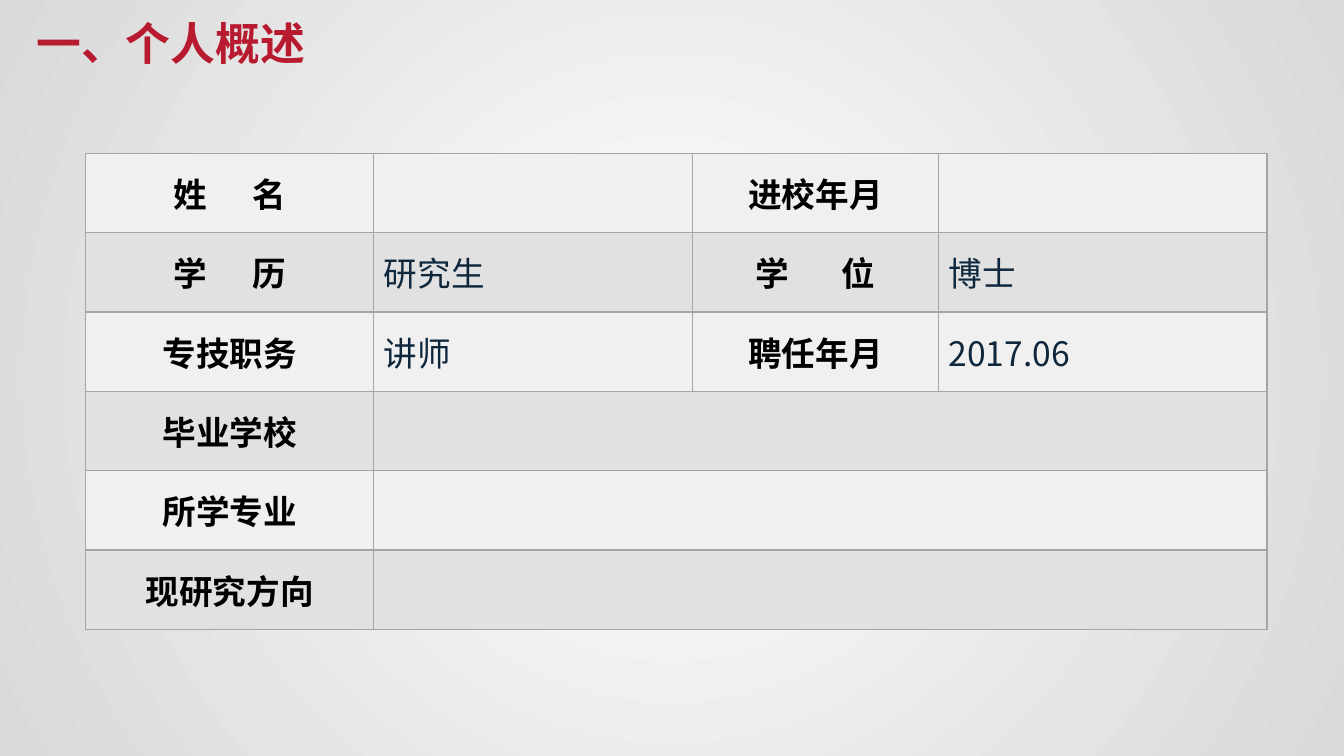
from dataclasses import dataclass

from lxml import etree
from pptx import Presentation
from pptx import util as u
from pptx.dml.color import RGBColor
from pptx.enum import text
from pptx.oxml import ns

TITLE = "一、个人概述"
ROWS = [
    ("姓 名", "", "进校年月", ""),
    ("学 历", "研究生", "学 位", "博士"),
    ("专技职务", "讲师", "聘任年月", "2017.06"),
    ("毕业学校", ""),
    ("所学专业", ""),
    ("现研究方向", ""),
]
COLUMN_WIDTHS = (7.26, 8.03, 6.2, 8.28)
ROW_HEIGHT = 2.0
TABLE_LEFT, TABLE_TOP = 2.16, 3.86
LABEL_GAPS = {"姓 名": 27, "学 历": 27, "学 位": 32}


@dataclass(frozen=True)
class Theme:
    font: str = "Noto Sans CJK SC"
    title_size: int = 32
    cell_size: int = 24
    title: str = "B81B30"
    label: str = "000000"
    value: str = "0F273D"
    bands: tuple = ("F0F0F0", "E1E1E1")
    border: str = "A5A5A5"
    backdrop: tuple = ("FFFFFF", "D9D9D9")


theme = Theme()


def add_run(p, words, size, color, bold):
    r = p.add_run()
    r.text = words
    r.font.name = theme.font
    r.font.size = u.Pt(size)
    r.font.bold = bold
    r.font.color.rgb = RGBColor.from_string(color)
    ea = etree.SubElement(r.font._element, ns.qn("a:ea"))
    ea.set("typeface", theme.font)
    return r


def set_backdrop(s):
    fill = s.background.fill
    fill.gradient()
    for stop, color, position in zip(fill.gradient_stops, theme.backdrop, (0, 1)):
        stop.color.rgb = RGBColor.from_string(color)
        stop.position = position
    lin = s._element.xpath(".//p:bg//a:lin")[0]
    circle = etree.Element(ns.qn("a:path"), {"path": "circle"})
    etree.SubElement(circle, ns.qn("a:fillToRect"), dict.fromkeys("ltrb", "50000"))
    lin.getparent().replace(lin, circle)


def add_title(s):
    sp = s.shapes.title
    sp.left, sp.top, sp.width, sp.height = map(u.Cm, (0.66, 0.25, 10.92, 1.63))
    tf = sp.text_frame
    tf.word_wrap = True
    tf.vertical_anchor = text.MSO_ANCHOR.MIDDLE
    p = tf.paragraphs[0]
    p.alignment = text.PP_ALIGN.LEFT
    add_run(p, TITLE, theme.title_size, theme.title, True)


def style_cell(cell, band):
    tc_pr = cell._tc.get_or_add_tcPr()
    for side in ("lnL", "lnR", "lnT", "lnB"):
        ln = etree.SubElement(tc_pr, ns.qn("a:" + side), w=str(u.Pt(1)))
        solid = etree.SubElement(ln, ns.qn("a:solidFill"))
        etree.SubElement(solid, ns.qn("a:srgbClr"), val=theme.border)
    cell.fill.solid()
    cell.fill.fore_color.rgb = RGBColor.from_string(band)
    cell.vertical_anchor = text.MSO_ANCHOR.MIDDLE


def write_cell(cell, words, is_label):
    p = cell.text_frame.paragraphs[0]
    if not is_label:
        if words:
            add_run(p, words, theme.cell_size, theme.value, False)
        return
    p.alignment = text.PP_ALIGN.CENTER
    for part in words if words in LABEL_GAPS else [words]:
        r = add_run(p, part, theme.cell_size, theme.label, True)
        if part == " ":
            r.font._element.set("spc", str(LABEL_GAPS[words] * 100))


def add_profile_table(s):
    columns = len(COLUMN_WIDTHS)
    frame = s.shapes.add_table(
        len(ROWS), columns, u.Cm(TABLE_LEFT), u.Cm(TABLE_TOP),
        u.Cm(sum(COLUMN_WIDTHS)), u.Cm(ROW_HEIGHT * len(ROWS)))
    table = frame.table
    table.first_row = table.horz_banding = False
    for column, width in zip(table.columns, COLUMN_WIDTHS):
        column.width = u.Cm(width)
    for i, row in enumerate(ROWS):
        table.rows[i].height = u.Cm(ROW_HEIGHT)
        for j in range(columns):
            style_cell(table.cell(i, j), theme.bands[i % 2])
        for j, words in enumerate(row):
            write_cell(table.cell(i, j), words, j % 2 == 0)
        if len(row) < columns:
            table.cell(i, len(row) - 1).merge(table.cell(i, columns - 1))


def main():
    prs = Presentation()
    prs.slide_width, prs.slide_height = u.Cm(33.87), u.Cm(19.05)
    s = prs.slides.add_slide(prs.slide_layouts[5])
    set_backdrop(s)
    add_title(s)
    add_profile_table(s)
    prs.save("out.pptx")


if __name__ == "__main__":
    main()
